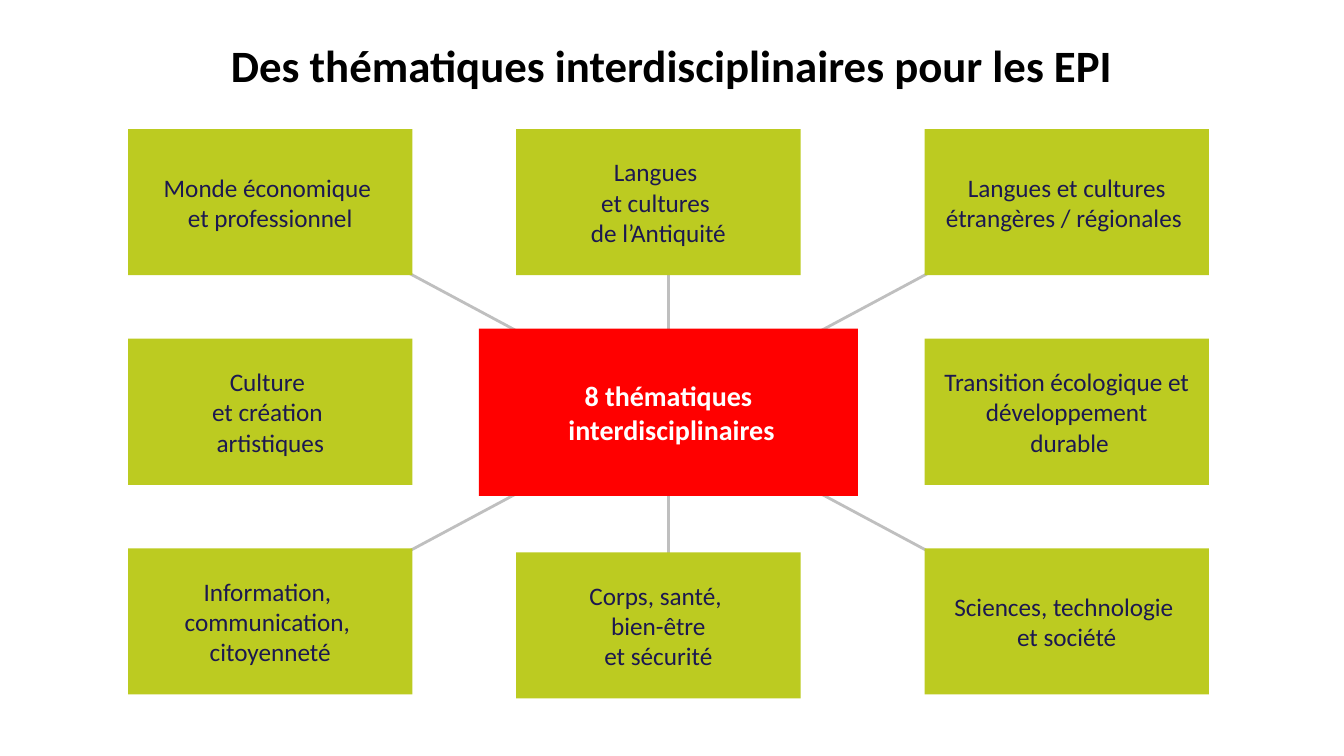
from dataclasses import dataclass

from lxml import etree
from pptx import Presentation
from pptx.dml.color import RGBColor
from pptx.enum.shapes import MSO_CONNECTOR, MSO_SHAPE
from pptx.enum.text import MSO_ANCHOR, MSO_AUTO_SIZE, PP_ALIGN
from pptx.oxml.ns import qn
from pptx.util import Inches, Pt

RECTANGLE = MSO_SHAPE.RECTANGLE
STRAIGHT = MSO_CONNECTOR.STRAIGHT
CENTER = PP_ALIGN.CENTER
TOP, MIDDLE = MSO_ANCHOR.TOP, MSO_ANCHOR.MIDDLE
TITLE_ONLY = 5

# Content: \n starts a paragraph, \v breaks a line
TITLE = "Des thématiques interdisciplinaires pour les EPI"
HUB = "8 thématiques\n interdisciplinaires"
THEMES = {  # (column, row): text
    (1, 2): "Corps, santé, \nbien-être\vet sécurité",
    (1, 0): "Langues \vet cultures \nde l’Antiquité",
    (2, 2): "Sciences, technologie \vet société",
    (2, 1): "Transition écologique et développement\n durable",
    (2, 0): "Langues et cultures\nétrangères / régionales ",
    (0, 2): "Information, \ncommunication, \ncitoyenneté",
    (0, 1): "Culture \vet création \nartistiques",
    (0, 0): "Monde économique \net professionnel",
}
TIGHT_THEME = (2, 1)


@dataclass(frozen=True)
class Theme:
    font: str = "Calibri"
    title_color: str = "000000"
    theme_fill: str = "BCCB21"
    theme_color: str = "1C1850"
    hub_fill: str = "FF0000"
    hub_color: str = "FFFFFF"
    spoke_color: str = "BFBFBF"
    title_size: int = 32
    hub_size: int = 20
    theme_size: int = 18
    spoke_width: int = 2


LOOK = Theme()

# Grid, in inches
SLIDE_W, SLIDE_H = 13.33, 7.5
COLUMNS = (1.27, 5.12, 9.17)
ROW_TOP, ROW_STEP = 1.28, 2.08
LAST_MIDDLE_DROP = 0.04  # the bottom middle theme sits slightly lower
THEME_W, THEME_H = 2.82, 1.45
HUB_W, HUB_H = 3.76, 1.66
HUB_LEFT, HUB_TOP = 4.75, 3.26
HUB_X = HUB_LEFT + HUB_W / 2
SPOKES = [  # x1, y1, x2, y2
    (4, 2.68, 9.45, 5.6),
    (9.45, 2.58, 3.81, 5.6),
    (HUB_X, 1.91, HUB_X, 6.17),
]


def write(frame, text, size, color, bold=False, anchor=MIDDLE):
    frame.text = text
    frame.word_wrap = True
    frame.vertical_anchor = anchor
    for paragraph in frame.paragraphs:
        paragraph.alignment = CENTER
        font = paragraph.font
        font.name, font.size, font.bold = LOOK.font, Pt(size), bold
        font.color.rgb = RGBColor.from_string(color)


def add_box(shapes, left, top, width, height, fill):
    box = shapes.add_shape(RECTANGLE, *map(Inches, (left, top, width, height)))
    box.shadow.inherit = False
    box.fill.solid()
    box.fill.fore_color.rgb = RGBColor.from_string(fill)
    box.line.fill.background()
    return box


def add_spoke(shapes, ends):
    spoke = shapes.add_connector(STRAIGHT, *map(Inches, ends))
    spoke.line.color.rgb = RGBColor.from_string(LOOK.spoke_color)
    spoke.line.width = Pt(LOOK.spoke_width)
    etree.SubElement(spoke._element.spPr, qn("a:effectLst"))


def main():
    deck = Presentation()
    deck.slide_width, deck.slide_height = Inches(SLIDE_W), Inches(SLIDE_H)
    slide = deck.slides.add_slide(deck.slide_layouts[TITLE_ONLY])
    shapes = slide.shapes

    # Title
    title = shapes.title
    title.left, title.top = 0, Inches(0.38)
    title.width, title.height = deck.slide_width, Inches(0.91)
    write(title.text_frame, TITLE, LOOK.title_size, LOOK.title_color, True, TOP)
    title.text_frame.auto_size = MSO_AUTO_SIZE.NONE
    title.text_frame.paragraphs[0].line_spacing = 0.9

    # Spokes, behind the boxes
    for ends in SPOKES:
        add_spoke(shapes, ends)

    # Themes around the hub
    for (column, row), text in THEMES.items():
        top = ROW_TOP + row * ROW_STEP
        if (column, row) == (1, 2):
            top += LAST_MIDDLE_DROP
        box = add_box(shapes, COLUMNS[column], top, THEME_W, THEME_H, LOOK.theme_fill)
        write(box.text_frame, text, LOOK.theme_size, LOOK.theme_color)
        if (column, row) == TIGHT_THEME:
            box.text_frame.margin_left = box.text_frame.margin_right = Inches(0.04)

    # Hub
    hub = add_box(shapes, HUB_LEFT, HUB_TOP, HUB_W, HUB_H, LOOK.hub_fill)
    write(hub.text_frame, HUB, LOOK.hub_size, LOOK.hub_color, True)

    deck.save("out.pptx")


if __name__ == "__main__":
    main()
